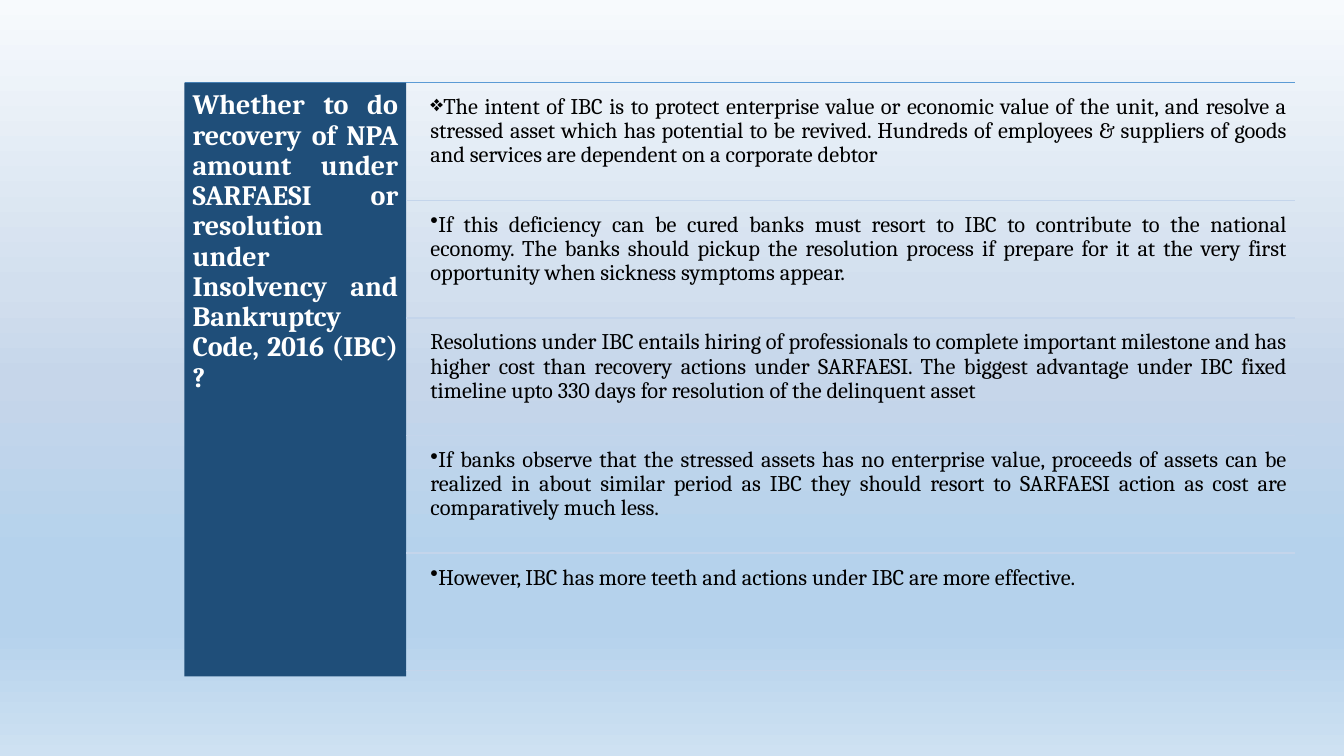
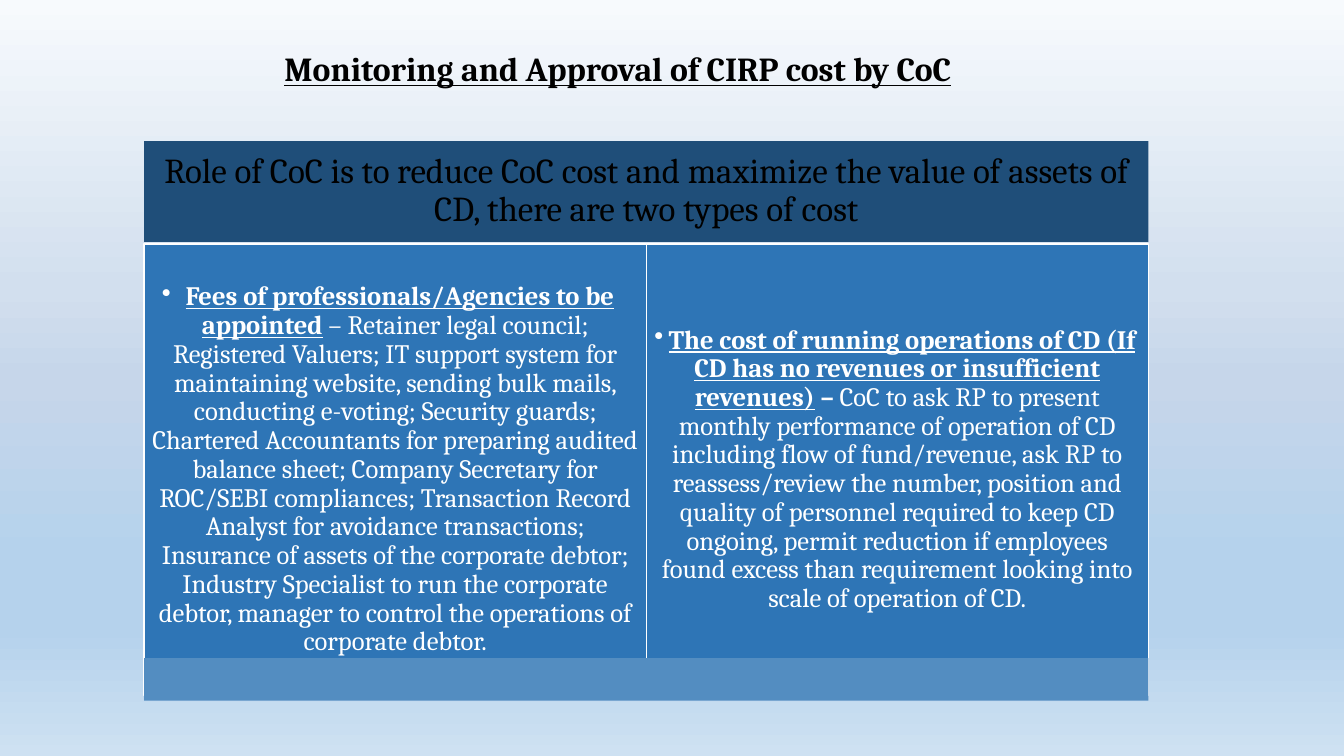
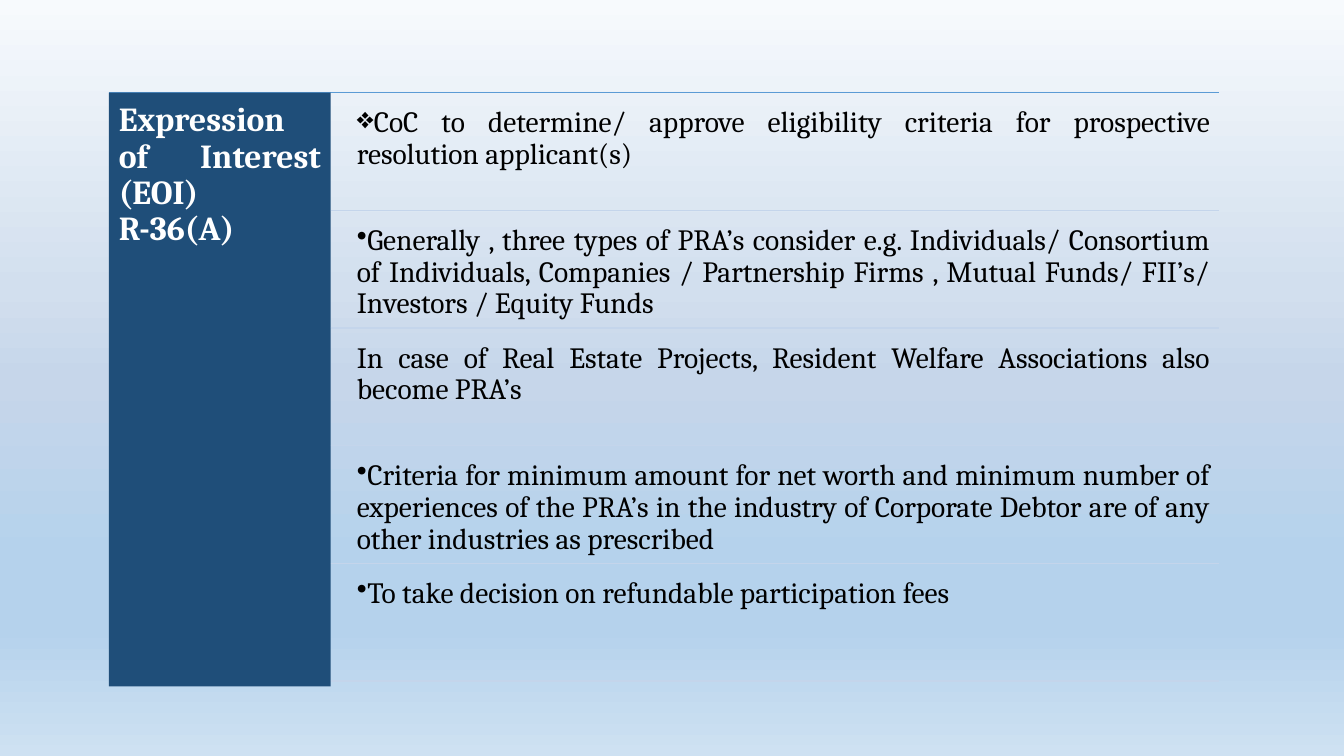
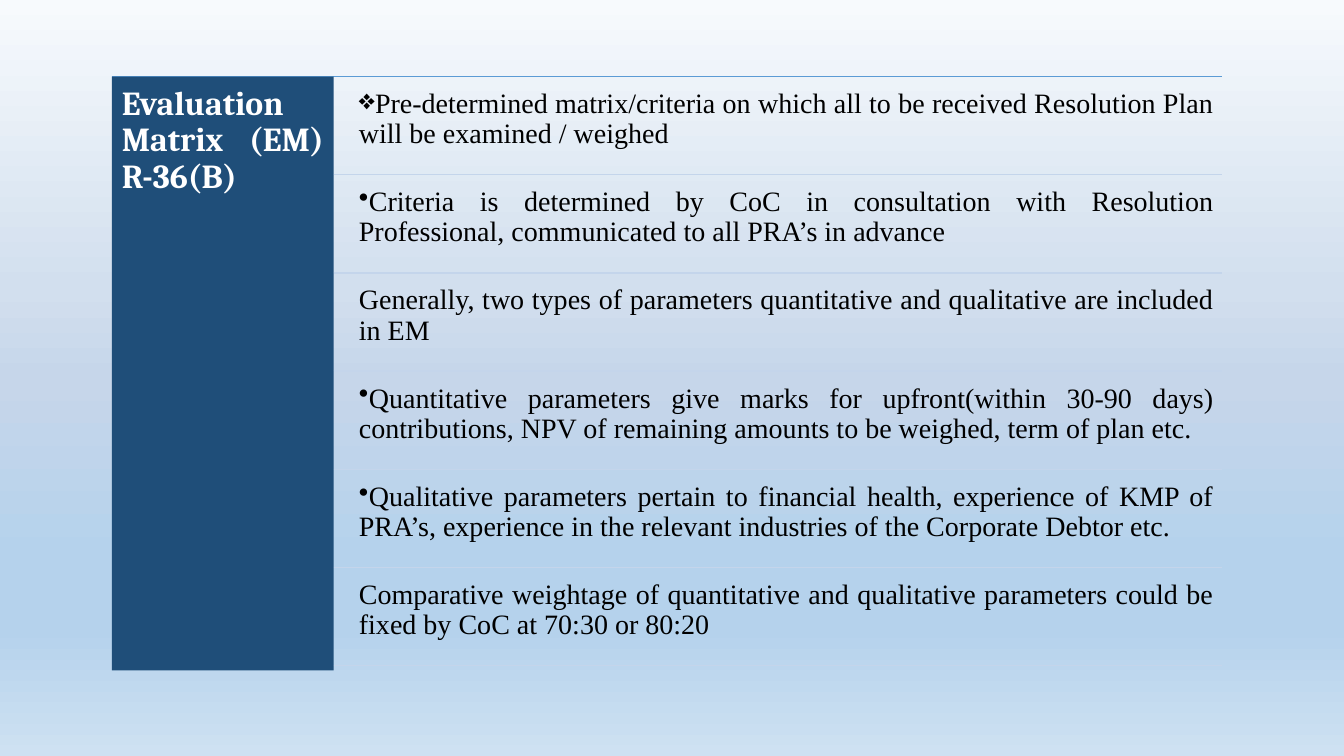
import dataclasses
import pptx
import pptx.dml.color
import pptx.enum.shapes
import pptx.enum.text
import pptx.oxml.ns
import pptx.util
from lxml import etree

Inches = pptx.util.Inches
Align = pptx.enum.text.PP_ALIGN
Anchor = pptx.enum.text.MSO_ANCHOR
qn = pptx.oxml.ns.qn


# Shared look
@dataclasses.dataclass(frozen=True)
class Theme:
    serif: str = "Cambria"
    roman: str = "Times New Roman"
    black: str = "000000"
    white: str = "FFFFFF"
    navy: str = "1F4E79"
    blue: str = "2E75B6"
    strip: str = "538DC1"
    edge: str = "5B9BD5"
    rule: str = "C4D5EB"
    title: int = 24
    band: int = 25
    column: int = 19
    sky: tuple = ((0, "F7FAFD"), (38, "D2DFEE"), (50, "C6D6EA"),
                  (74, "B5D2EC"), (83, "B5D2EC"), (100, "CEE1F2"))


THEME = Theme()
DIAMOND, DOT = "❖", "•"


def rgb(code):
    return pptx.dml.color.RGBColor.from_string(code)


def paint(master):
    """Give every slide the gradient through the master."""
    fill = master.background.fill
    fill.gradient()
    fill.gradient_angle = 270
    stops = master.element.find(".//" + qn("a:gsLst"))
    for stop in list(stops):
        stops.remove(stop)
    for place, code in THEME.sky:
        stop = etree.SubElement(stops, qn("a:gs"), pos=str(place * 1000))
        etree.SubElement(stop, qn("a:srgbClr"), val=code)


# Kinds of element
def write(shape, runs, size, color, align, face=THEME.serif, inset=0.1,
          anchor=Anchor.TOP, mark=None, spacing=0.9):
    """Fill a shape with one paragraph; runs are (text, bold, underline)."""
    frame = shape.text_frame
    frame.word_wrap = True
    frame.vertical_anchor = anchor
    frame.margin_left = frame.margin_right = Inches(inset)
    frame.margin_top = frame.margin_bottom = Inches(inset)
    para = frame.paragraphs[0]
    para.alignment = align
    para.line_spacing = spacing
    if mark:
        props = para._p.get_or_add_pPr()
        etree.SubElement(props, qn("a:buChar"), char=mark)
    font = para.font
    font.name, font.size = face, pptx.util.Pt(size)
    font.color.rgb = rgb(color)
    for text, bold, under in runs:
        run = para.add_run()
        run.text = text
        run.font.bold, run.font.underline = bold, under


def block(slide, left, top, width, height, fill, line=None):
    shape = slide.shapes.add_shape(
        pptx.enum.shapes.MSO_SHAPE.RECTANGLE,
        Inches(left), Inches(top), Inches(width), Inches(height))
    shape.shadow.inherit = False
    shape.fill.solid()
    shape.fill.fore_color.rgb = rgb(fill)
    if line:
        shape.line.color.rgb = rgb(line)
        shape.line.width = pptx.util.Pt(1)
    else:
        shape.line.fill.background()
    return shape


def rule(slide, left, right, top, color):
    line = slide.shapes.add_connector(
        pptx.enum.shapes.MSO_CONNECTOR.STRAIGHT,
        Inches(left), Inches(top), Inches(right), Inches(top))
    line.line.color.rgb = rgb(color)
    line.line.width = pptx.util.Pt(1)
    etree.SubElement(line._element.spPr, qn("a:effectLst"))


def topic(deck, left, top, head, rows, sizes, insets, face=THEME.serif):
    """A slide with a side panel and ruled rows of text beside it."""
    slide = deck.slides.add_slide(deck.slide_layouts[6])
    side, full, tall = 2.2, 11.01, 5.89
    right = left + full
    rule(slide, left, right, top, THEME.edge)
    panel = block(slide, left, top, side, tall, THEME.navy)
    write(panel, [(head, True, False)], sizes[0], THEME.white, Align.JUSTIFY,
          inset=insets[0])

    # Rows share the panel height, with gaps of a twentieth of a row
    count = len(rows)
    high = tall / (count + 0.05 * (count + 1))
    gap = 0.05 * high
    start = left + side + 0.17
    for i, (mark, text) in enumerate(rows):
        y = top + gap + i * (high + gap)
        box = slide.shapes.add_textbox(
            Inches(start), Inches(y), Inches(right - start), Inches(high))
        write(box, [(text, False, False)], sizes[1], THEME.black,
              Align.JUSTIFY, face, insets[1], mark=mark)
        rule(slide, left + side, right, y + high, THEME.rule)


def costs(deck):
    """A titled slide with a band, two columns and a closing strip."""
    slide = deck.slides.add_slide(deck.slide_layouts[5])
    title = slide.shapes.title
    title.left, title.top = Inches(2.72), Inches(0.43)
    title.width, title.height = Inches(7.61), Inches(0.5)
    write(title, [("Monitoring and Approval of CIRP cost by CoC", True, True)],
          THEME.title, THEME.black, Align.LEFT, spacing=1.0)
    title.text_frame.margin_top = title.text_frame.margin_bottom = Inches(0.05)

    left, full = 1.43, 9.96
    band = block(slide, left, 1.4, full, 1, THEME.navy)
    write(band, [("Role of CoC is to reduce CoC cost and maximize the value of "
                  "assets of CD, there are two types of cost", False, False)],
          THEME.band, THEME.black, Align.CENTER, anchor=Anchor.MIDDLE)

    columns = [
        ("Fees of professionals/Agencies to be appointed", " ",
         "– Retainer legal council; Registered Valuers; IT support system for "
         "maintaining website, sending bulk mails, conducting e-voting; "
         "Security guards; Chartered Accountants for preparing audited balance "
         "sheet; Company Secretary for ROC/SEBI compliances; Transaction "
         "Record Analyst for avoidance transactions; Insurance of assets of "
         "the corporate debtor; Industry Specialist to run the corporate "
         "debtor, manager to control the operations of corporate debtor."),
        ("The cost of running operations of CD (If CD has no revenues or "
         "insufficient revenues)", " – ",
         "CoC to ask RP to present monthly performance of operation of CD "
         "including flow of fund/revenue, ask RP to reassess/review the "
         "number, position and quality of personnel required to keep CD "
         "ongoing, permit reduction if employees found excess than "
         "requirement looking into scale of operation of CD."),
    ]
    width = full / len(columns)
    for i, (lead, dash, body) in enumerate(columns):
        column = block(slide, left + i * width, 2.42, width, 4.48,
                       THEME.blue, THEME.white)
        write(column,
              [(lead, True, True), (dash, True, False), (body, False, False)],
              THEME.column, THEME.white, Align.CENTER, inset=0.08,
              anchor=Anchor.MIDDLE, mark=DOT)
    block(slide, left, 6.53, full, 0.42, THEME.strip)


def main():
    deck = pptx.Presentation()
    deck.slide_width, deck.slide_height = Inches(13.33), Inches(7.5)
    paint(deck.slide_master)

    # Recovery or resolution
    topic(deck, 1.83, 0.82,
          "Whether to do recovery of NPA amount under SARFAESI or resolution "
          "under Insolvency and Bankruptcy Code, 2016 (IBC) ?",
          [(DIAMOND, "The intent of IBC is to protect enterprise value or "
            "economic value of the unit, and resolve a stressed asset which "
            "has potential to be revived. Hundreds of employees & suppliers "
            "of goods and services are dependent on a corporate debtor"),
           (DOT, "If this deficiency can be cured banks must resort to IBC to "
            "contribute to the national economy. The banks should pickup the "
            "resolution process if prepare for it at the very first "
            "opportunity when sickness symptoms appear."),
           (None, "Resolutions under IBC entails hiring of professionals to "
            "complete important milestone and has higher cost than recovery "
            "actions under SARFAESI. The biggest advantage under IBC fixed "
            "timeline upto 330 days for resolution of the delinquent asset"),
           (DOT, "If banks observe that the stressed assets has no enterprise "
            "value, proceeds of assets can be realized in about similar "
            "period as IBC they should resort to SARFAESI action as cost are "
            "comparatively much less."),
           (DOT, "However, IBC has more teeth and actions under IBC are more "
            "effective.")],
          (20, 16), (0.08, 0.07))

    # Cost of the process
    costs(deck)

    # Expression of interest
    topic(deck, 1.08, 0.92, "Expression of Interest (EOI) R-36(A)",
          [(DIAMOND, "CoC to determine/ approve eligibility criteria for "
            "prospective resolution applicant(s)"),
           (DOT, "Generally , three types of PRA’s consider e.g. Individuals/ "
            "Consortium of Individuals, Companies / Partnership Firms , "
            "Mutual Funds/ FII’s/ Investors / Equity Funds"),
           (None, "In case of Real Estate Projects, Resident Welfare "
            "Associations also become PRA’s"),
           (DOT, "Criteria for minimum amount for net worth and minimum "
            "number of experiences of the PRA’s in the industry of Corporate "
            "Debtor are of any other industries as prescribed"),
           (DOT, "To take decision on refundable participation fees")],
          (24, 21), (0.1, 0.09))

    # Evaluation matrix
    topic(deck, 1.11, 0.76, "Evaluation Matrix (EM) R-36(B)",
          [(DIAMOND, "Pre-determined matrix/criteria on which all to be "
            "received Resolution Plan will be examined / weighed"),
           (DOT, "Criteria is determined by CoC in consultation with "
            "Resolution Professional, communicated to all PRA’s in advance"),
           (None, "Generally, two types of parameters quantitative and "
            "qualitative are included in EM"),
           (DOT, "Quantitative parameters give marks for upfront(within 30-90 "
            "days) contributions, NPV of remaining amounts to be weighed, "
            "term of plan etc."),
           (DOT, "Qualitative parameters pertain to financial health, "
            "experience of KMP of PRA’s, experience in the relevant "
            "industries of the Corporate Debtor etc."),
           (None, "Comparative weightage of quantitative and qualitative "
            "parameters could be fixed by CoC at 70:30 or 80:20")],
          (24, 20), (0.1, 0.08), THEME.roman)

    deck.save("out.pptx")


if __name__ == "__main__":
    main()
